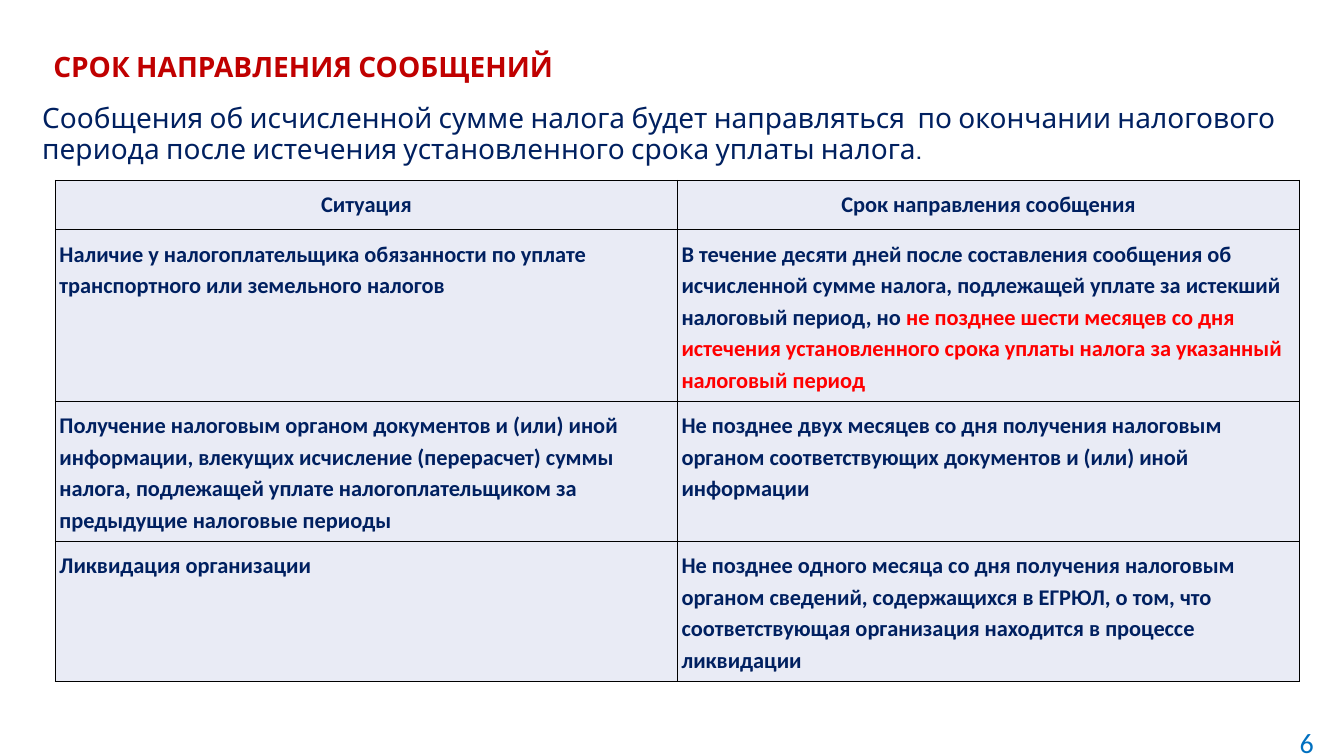
import pptx
import pptx.util
import pptx.dml.color
import pptx.enum.text
import pptx.oxml
import pptx.oxml.ns

Inches = pptx.util.Inches
Pt = pptx.util.Pt
ALIGN = pptx.enum.text.PP_ALIGN
ANCHOR = pptx.enum.text.MSO_ANCHOR

COLORS = {"navy": "002060", "title": "C00000", "red": "FF0000",
          "page": "0070C0", "cell": "E9EBF5", "line": "000000"}


def add_run(para, text, size, font, color, bold=False):
    run = para.add_run()
    run.text = text
    run.font.size = Pt(size)
    run.font.name = font
    run.font.bold = bold
    run.font.color.rgb = pptx.dml.color.RGBColor.from_string(COLORS[color])


def add_border(cell):
    props = cell._tc.get_or_add_tcPr()
    for pos, side in enumerate(("lnL", "lnR", "lnT", "lnB")):
        props.insert(pos, pptx.oxml.parse_xml(
            f'<a:{side} {pptx.oxml.ns.nsdecls("a")} w="{Pt(1)}"><a:solidFill>'
            f'<a:srgbClr val="{COLORS["line"]}"/></a:solidFill></a:{side}>'))


deck = pptx.Presentation()
deck.slide_width = Inches(13.33)
deck.slide_height = Inches(7.5)
slide = deck.slides.add_slide(deck.slide_layouts[6])

# Title, lead text and page number
LEAD = ("Сообщения об исчисленной сумме налога будет направляться  по окончании "
        "налогового периода после истечения установленного срока уплаты налога.")
texts = [
    ((0.43, 0.29, 12.45, 0.77), "СРОК НАПРАВЛЕНИЯ СООБЩЕНИЙ", "Cabin", "title",
     True, ANCHOR.MIDDLE, ALIGN.LEFT, 0.9),
    ((0.32, 0.99, 12.61, 6.11), LEAD, "Cabin", "navy",
     False, ANCHOR.TOP, ALIGN.LEFT, 0.9),
    ((12.26, 7.1, 0.87, 0.53), "6", "Calibri", "page",
     False, ANCHOR.MIDDLE, ALIGN.RIGHT, 1.0),
]
for place, text, font, color, bold, anchor, align, spacing in texts:
    frame = slide.shapes.add_textbox(*map(Inches, place)).text_frame
    frame.word_wrap = True
    frame.vertical_anchor = anchor
    para = frame.paragraphs[0]
    para.alignment = align
    para.line_spacing = spacing
    add_run(para, text, 20, font, color, bold)

# Table content: each cell is a list of (text, color) runs
rows = [
    [[("Ситуация", "navy")], [("Срок направления сообщения", "navy")]],
    [[("Наличие у налогоплательщика обязанности по уплате транспортного или "
       "земельного налогов", "navy")],
     [("В течение десяти дней после составления сообщения об исчисленной сумме "
       "налога, подлежащей уплате за истекший налоговый период, но ", "navy"),
      ("не позднее шести месяцев со дня истечения установленного срока уплаты "
       "налога за указанный налоговый период", "red")]],
    [[("Получение налоговым органом документов и (или) иной информации, влекущих "
       "исчисление (перерасчет) суммы налога, подлежащей уплате "
       "налогоплательщиком за предыдущие налоговые периоды", "navy")],
     [("Не позднее двух месяцев со дня получения налоговым органом "
       "соответствующих документов и (или) иной информации", "navy")]],
    [[("Ликвидация организации", "navy")],
     [("Не позднее одного месяца со дня получения налоговым органом сведений, "
       "содержащихся в ЕГРЮЛ, о том, что соответствующая организация находится "
       "в процессе ликвидации", "navy")]],
]
heights = [0.49, 1.7, 1.39, 1.39]

# Table
table = slide.shapes.add_table(
    len(rows), 2, Inches(0.55), Inches(1.79),
    Inches(12.34), Inches(sum(heights))).table
for col in table.columns:
    col.width = Inches(6.17)
for r, (row, height) in enumerate(zip(rows, heights)):
    table.rows[r].height = Inches(height)
    for c, runs in enumerate(row):
        cell = table.cell(r, c)
        cell.fill.solid()
        cell.fill.fore_color.rgb = pptx.dml.color.RGBColor.from_string(COLORS["cell"])
        cell.margin_left = cell.margin_right = Inches(0.04)
        cell.margin_top = cell.margin_bottom = Inches(0.07)
        add_border(cell)
        para = cell.text_frame.paragraphs[0]
        para.alignment = ALIGN.CENTER if r == 0 else ALIGN.LEFT
        para.line_spacing = 1.15
        for text, color in runs:
            add_run(para, text, 16, "Calibri", color, True)

deck.save("out.pptx")
